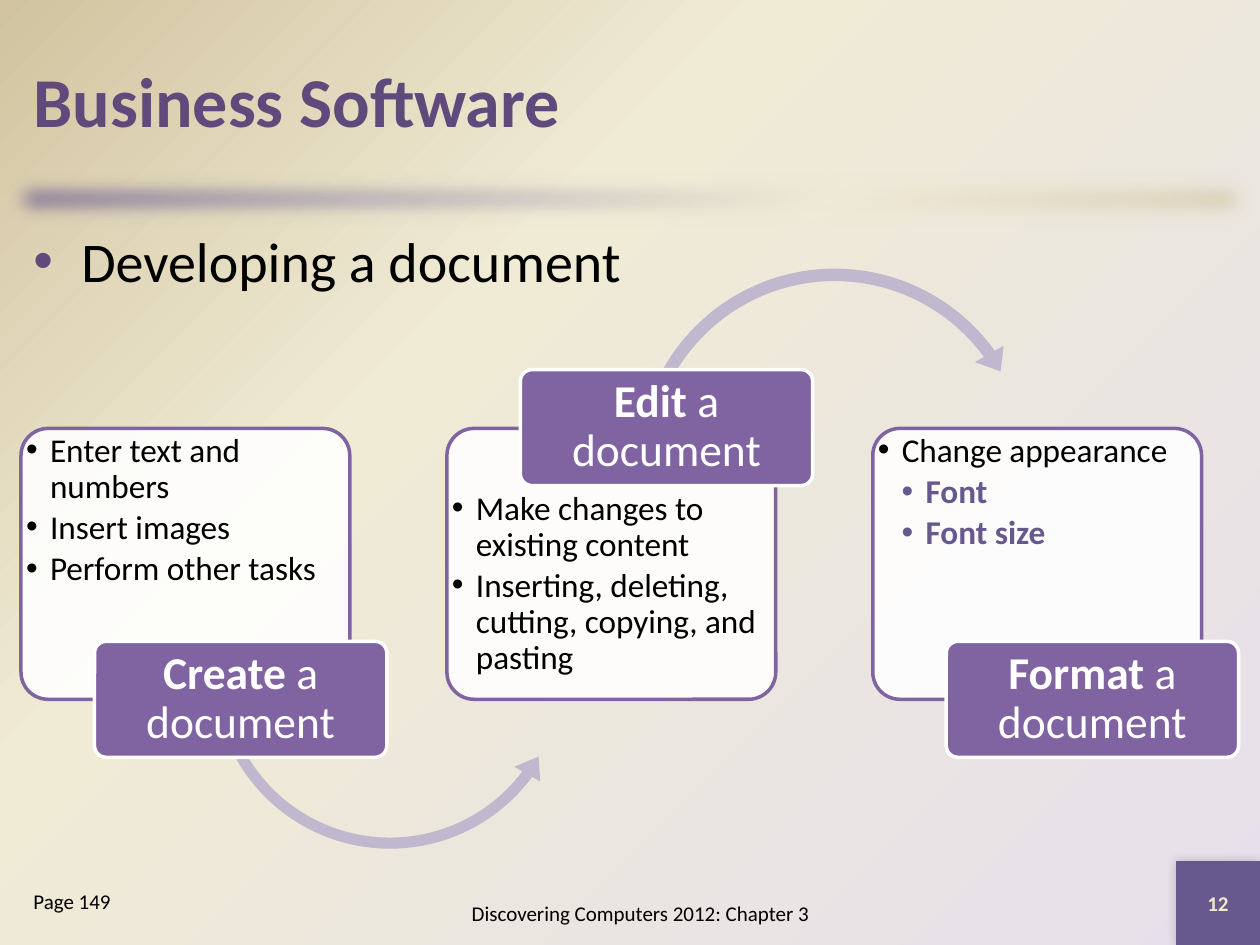
import dataclasses

import pptx
import pptx.dml.color
import pptx.enum.shapes
import pptx.enum.text
import pptx.oxml
import pptx.oxml.ns
import pptx.util

SHAPE = pptx.enum.shapes.MSO_SHAPE
ALIGN = pptx.enum.text.PP_ALIGN
ANCHOR = pptx.enum.text.MSO_ANCHOR
COLUMNS, ROWS = 120, 90
WIDTH, HEIGHT = pptx.util.Inches(10), pptx.util.Inches(7.5)


@dataclasses.dataclass(frozen=True)
class Theme:
    """Colours, type sizes and font of the deck."""
    font: str = "Calibri"
    heading: str = "604A7B"
    accent: str = "67588E"
    step: str = "8064A2"
    arrow: str = "C0B8CE"
    lavender: str = "E6E0EC"
    cream: str = "F0EBD5"
    tan: str = "D1C39F"
    number: str = "EEEBCA"
    ink: str = "000000"
    paper: str = "FFFFFF"
    title_size: int = 40
    body_size: int = 32
    step_size: int = 26
    detail_size: int = 19
    small_size: int = 12


THEME = Theme()

STEPS = (
    ("Create", (("Enter text and numbers", 0), ("Insert images", 0),
                ("Perform other tasks", 0))),
    ("Edit", (("Make changes to existing content", 0),
              ("Inserting, deleting, cutting, copying, and pasting", 0))),
    ("Format", (("Change appearance", 0), ("Font", 1), ("Font size", 1))),
)
ARROWS = (
    (SHAPE.LEFT_CIRCULAR_ARROW, (19.44, 46.32, 35.4, 35.4),
     (0.03, 4.21, 21.96, 90.25, 0.04)),
    (SHAPE.CIRCULAR_ARROW, (59.76, 24.6, 39.48, 39.48),
     (0.03, 3.75, 194.5, 125.76, 0.04)),
)


def rgb(code):
    """Return a colour object for a hex code."""
    return pptx.dml.color.RGBColor.from_string(code)


def element(markup):
    """Return a drawing element built from markup without a namespace."""
    name, rest = markup[1:].split(" ", 1)
    return pptx.oxml.parse_xml(f"<a:{name} {pptx.oxml.ns.nsdecls('a')} {rest}")


def area(column, row, columns, rows):
    """Turn a grid area into left, top, width and height."""
    across, down = WIDTH / COLUMNS, HEIGHT / ROWS
    return (round(column * across), round(row * down),
            round(columns * across), round(rows * down))


def use_gradient(properties, start, direction):
    """Swap the solid fill of a properties element for a gradient."""
    stops = "".join(
        f'<a:gs pos="{share * 1000}"><a:srgbClr val="{code}"/></a:gs>'
        for share, code in ((0, start), (65, THEME.cream), (100, THEME.tan)))
    solid = properties.find(pptx.oxml.ns.qn("a:solidFill"))
    properties.replace(solid, element(
        f'<gradFill rotWithShape="1"><a:gsLst>{stops}</a:gsLst>{direction}</a:gradFill>'))


def add_block(page, kind, place, fill, line=None, adjustments=()):
    """Add a filled preset shape, outlined if a line colour is given."""
    block = page.shapes.add_shape(kind, *area(*place))
    block.shadow.inherit = False
    block.fill.solid()
    block.fill.fore_color.rgb = rgb(fill)
    if line:
        block.line.color.rgb = rgb(line)
        block.line.width = pptx.util.Pt(2)
    else:
        block.line.fill.background()
    for index, value in enumerate(adjustments):
        block.adjustments[index] = value
    return block


def add_effect(block, markup):
    """Put one effect in the effect list of a shape."""
    effects = block._element.spPr.find(pptx.oxml.ns.qn("a:effectLst"))
    effects.append(element(markup))


def set_frame(frame, anchor=ANCHOR.TOP, inset=None):
    """Set wrapping, anchor and margins of a text frame."""
    frame.word_wrap = True
    frame.vertical_anchor = anchor
    if inset is not None:
        frame.margin_left = frame.margin_right = pptx.util.Inches(inset)
        frame.margin_top = frame.margin_bottom = pptx.util.Inches(inset)


def style(para, size, color, bold=False, align=ALIGN.LEFT):
    """Format a paragraph and all of its runs."""
    para.alignment = align
    for span in para.runs:
        span.font.name = THEME.font
        span.font.size = pptx.util.Pt(size)
        span.font.bold = bold
        span.font.color.rgb = rgb(color)


def add_bullet(para, color, hanging, level=0):
    """Give a paragraph a round bullet with a hanging indent."""
    properties = para._p.get_or_add_pPr()
    indent = pptx.util.Inches(hanging)
    properties.set("marL", str(indent * (level + 1)))
    properties.set("indent", str(-indent))
    properties.append(element(f'<buClr ><a:srgbClr val="{color}"/></a:buClr>'))
    properties.append(element('<buFont typeface="Arial"/>'))
    properties.append(element('<buChar char="•"/>'))


def add_label(page, place, text, size, color, anchor=ANCHOR.TOP, **look):
    """Add a one-paragraph text box and return its paragraph."""
    box = page.shapes.add_textbox(*area(*place))
    set_frame(box.text_frame, anchor)
    para = box.text_frame.paragraphs[0]
    para.text = text
    style(para, size, color, **look)
    return para


def add_details(page, place, details):
    """Add the bulleted text of one step."""
    frame = page.shapes.add_textbox(*area(*place)).text_frame
    set_frame(frame, inset=0.04)
    frame.text = "\n".join(text for text, _ in details)
    for para, (_, level) in zip(frame.paragraphs, details):
        color = THEME.accent if level else THEME.ink
        add_bullet(para, color, 0.19, level)
        para.line_spacing = 0.9
        para.space_after = pptx.util.Pt(3)
        style(para, THEME.detail_size, color, bold=level > 0)


def add_step(page, index, verb, details):
    """Add a card with its details, outgoing arrow and name tag."""
    left, top = 2 + 40.56 * index, 40.8
    tag_above = index % 2 == 1
    card = add_block(page, SHAPE.ROUNDED_RECTANGLE, (left, top, 31.32, 25.8),
                     THEME.paper, THEME.step, (0.1,))
    code = card.fill._xPr.find(".//" + pptx.oxml.ns.qn("a:srgbClr"))
    code.append(element('<alpha val="90000"/>'))
    add_details(page, (left, top + 5.52 * tag_above, 31.32, 20.28), details)
    if index < len(ARROWS):
        kind, place, adjustments = ARROWS[index]
        add_block(page, kind, place, THEME.arrow, adjustments=adjustments)
    tag_top = 35.2 if tag_above else 61.08
    tag = add_block(page, SHAPE.ROUNDED_RECTANGLE, (left + 7, tag_top, 27.84, 11.04),
                    THEME.step, THEME.paper, (0.1,))
    set_frame(tag.text_frame, ANCHOR.MIDDLE, 0.02)
    para = tag.text_frame.paragraphs[0]
    para.line_spacing = 0.9
    for text in (verb, " a document"):
        para.add_run().text = text
    style(para, THEME.step_size, THEME.paper, align=ALIGN.CENTER)
    para.runs[0].font.bold = True


def add_backdrop(page):
    """Paint the background, the soft rule and the number square."""
    page.background.fill.solid()
    use_gradient(page.background.fill._xPr, THEME.lavender,
                 '<a:path path="circle"><a:fillToRect l="100000" t="100000"/></a:path>')
    rule = add_block(page, SHAPE.RECTANGLE, (0, 16, COLUMNS, 6), THEME.accent)
    use_gradient(rule._element.spPr, THEME.accent, '<a:lin ang="2700000"/>')
    add_effect(rule, '<softEdge rad="158750"/>')
    square = add_block(page, SHAPE.RECTANGLE, (112, 82, 8, 8), THEME.accent)
    add_effect(square, '<outerShdw blurRad="76200" dist="0" dir="13500000">'
               f'<a:srgbClr val="{THEME.ink}"><a:alpha val="20000"/></a:srgbClr></a:outerShdw>')


def add_title(page, text):
    """Move, fill and format the title placeholder."""
    title = page.shapes.title
    title.left, title.top, title.width, title.height = area(2, 2, 116, 15)
    title.text_frame.text = text
    set_frame(title.text_frame, ANCHOR.MIDDLE)
    style(title.text_frame.paragraphs[0], THEME.title_size, THEME.heading, bold=True)


def main():
    """Build the slide and save the deck."""
    deck = pptx.Presentation()
    deck.slide_width, deck.slide_height = WIDTH, HEIGHT
    page = deck.slides.add_slide(deck.slide_layouts[5])
    add_backdrop(page)
    add_title(page, "Business Software")
    topic = add_label(page, (2, 21, 116, 8), "Developing a document",
                      THEME.body_size, THEME.ink)
    add_bullet(topic, THEME.heading, 0.38)
    add_label(page, (36, 84, 50, 6), "Discovering Computers 2012: Chapter 3",
              THEME.small_size, THEME.ink, ANCHOR.MIDDLE, align=ALIGN.CENTER)
    add_label(page, (112, 82, 8, 8), "12", THEME.small_size, THEME.number,
              ANCHOR.MIDDLE, bold=True, align=ALIGN.CENTER)
    add_label(page, (2, 84, 22, 6), "Page 149", THEME.small_size, THEME.ink)
    for index, (verb, details) in enumerate(STEPS):
        add_step(page, index, verb, details)
    deck.save("out.pptx")


if __name__ == "__main__":
    main()
